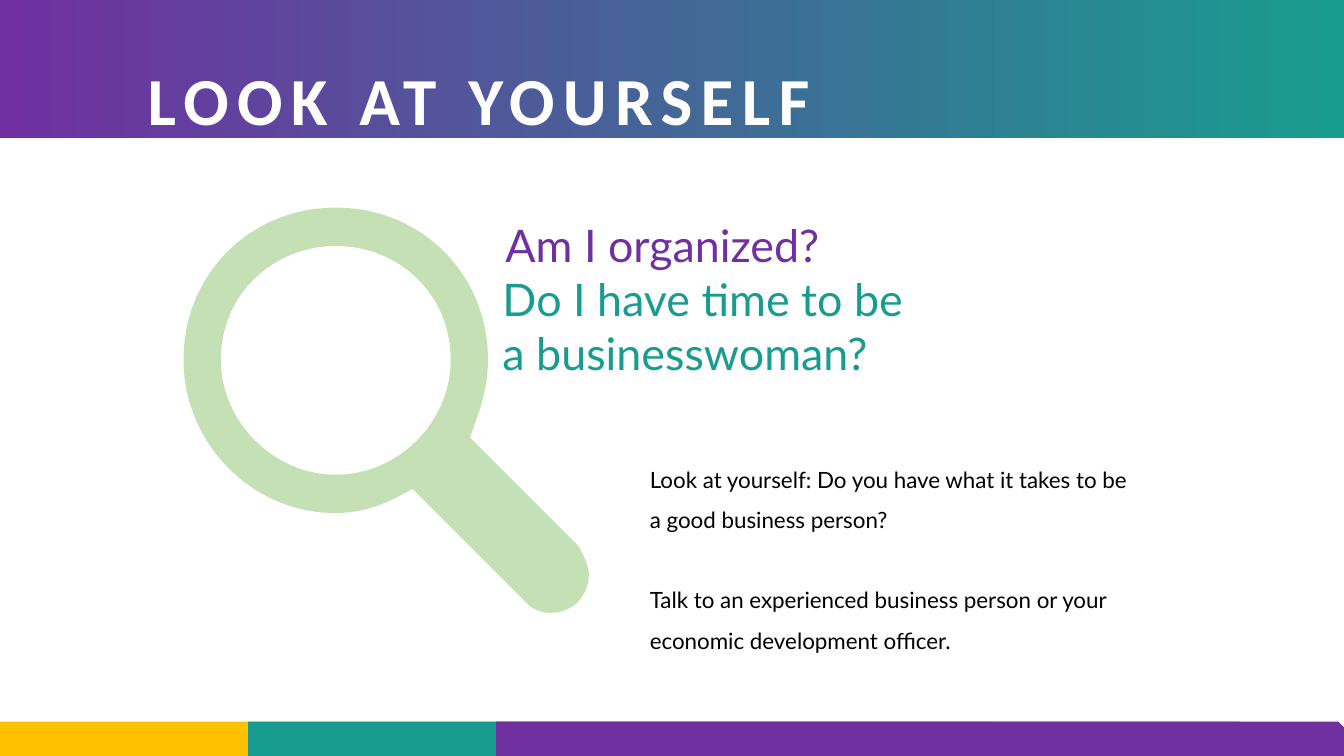
from dataclasses import dataclass
from pptx import Presentation
from pptx.dml.color import RGBColor as Color
from pptx.enum.shapes import MSO_SHAPE as Shape
from pptx.enum.text import MSO_ANCHOR as Anchor, MSO_AUTO_SIZE as AutoSize, PP_ALIGN as Align
from pptx.oxml.ns import qn
from pptx.util import Inches, Pt


@dataclass(frozen=True)
class Theme:
    purple = Color.from_string("7030A0")
    teal = Color.from_string("189C8F")
    amber = Color.from_string("FFC000")
    leaf = Color.from_string("C5E0B4")
    white = Color.from_string("FFFFFF")
    black = Color.from_string("000000")
    title_font = "Calibri"
    text_font = "Lato"
    title_size = Pt(48)
    question_size = Pt(32)
    body_size = Pt(16)
    advice_gap = Pt(28.5)


theme = Theme()
deck = Presentation()
deck.slide_width, deck.slide_height = Inches(13.33), Inches(7.5)
cell = deck.slide_height / 75
columns = deck.slide_width / cell


def grid(*cells):
    return [round(count * cell) for count in cells]


def write(box, lines, font, size, color):
    frame = box.text_frame
    frame.text = "\n".join(lines)
    frame.word_wrap = True
    frame.auto_size = AutoSize.NONE
    frame.vertical_anchor = Anchor.TOP
    for para in frame.paragraphs:
        para.alignment = Align.LEFT
        para.font.name, para.font.size = font, size
        para.font.color.rgb = color
    return frame.paragraphs


page = deck.slides.add_slide(deck.slide_layouts[1])
title, body = page.placeholders

band = page.shapes.add_shape(Shape.RECTANGLE, *grid(0, 0, columns, 13.7))
band.shadow.inherit = False
band.line.fill.background()
band.fill.gradient()
band.fill.gradient_angle = 0
for stop, color in zip(band.fill.gradient_stops, (theme.purple, theme.teal)):
    stop.color.rgb = color
title._element.addprevious(band._element)

title.left, title.top, title.width, title.height = grid(13.65, 5.3, 107.4, 7)
heading = write(title, ["LOOK AT YOURSELF"], theme.title_font, theme.title_size, theme.white)[0]
heading.font.bold = True
heading.runs[0].font._element.set("spc", "600")

footer = page.shapes.add_group_shape()
bar_step, bar_width = 24.6, 98.9
for index, color in enumerate((theme.amber, theme.teal, theme.purple)):
    left = index * bar_step
    width = min(bar_width, columns - left)
    bar = footer.shapes.add_shape(Shape.SNIP_1_RECTANGLE, *grid(left, 71.6, width, 3.4))
    bar.shadow.inherit = False
    bar.fill.solid()
    bar.fill.fore_color.rgb = color
    bar.line.fill.background()

body.left, body.top, body.width, body.height = grid(63.45, 44.4, 50.2, 20.7)
advice = write(body, [
    "Look at yourself: Do you have what it takes to be a good business person?",
    "Talk to an experienced business person or your economic development officer.",
], theme.text_font, theme.body_size, theme.black)
for index, para in enumerate(advice):
    para.line_spacing = 1.5
    para.space_before = index * theme.advice_gap
    settings = para._p.get_or_add_pPr()
    settings.set("marL", "0")
    settings.set("indent", "0")
    settings.append(settings.makeelement(qn("a:buNone"), {}))

handle_and_rim = [
    (57.4, 54.2),
    (57.9, 55.2), (58.4, 56.1), (58.4, 57),
    (58.4, 59), (56.9, 60.8), (54.6, 60.8),
    (53.7, 60.8), (52.7, 60.4), (52.3, 59.9),
    (40.9, 48.5), (40.9, 48.5), (40.9, 48.5),
    (38.5, 49.9), (36.2, 50.9), (33.3, 50.9),
    (24.8, 50.9), (18.2, 43.8), (18.2, 35.7),
    (18.2, 27.2), (24.8, 20.6), (33.3, 20.6),
    (41.8, 20.6), (48.4, 27.2), (48.4, 35.7),
    (48.4, 38.6), (47.5, 41), (46.6, 43.4),
    (57.4, 54.2), (57.4, 54.2), (57.4, 54.2),
]
lens = [
    (33.3, 24.4),
    (27.2, 24.4), (21.9, 29.1), (21.9, 35.7),
    (21.9, 41.9), (27.2, 47.1), (33.3, 47.1),
    (39.5, 47.1), (44.7, 41.9), (44.7, 35.7),
    (44.7, 29.1), (39.5, 24.4), (33.3, 24.4),
]
outline = page.shapes.build_freeform(*grid(*handle_and_rim[0]), scale=1.0)
outline.add_line_segments([grid(*point) for point in handle_and_rim[1:]], close=True)
outline.move_to(*grid(*lens[0]))
outline.add_line_segments([grid(*point) for point in lens[1:]], close=True)
magnifier = outline.convert_to_shape()
magnifier.shadow.inherit = False
magnifier.fill.solid()
magnifier.fill.fore_color.rgb = theme.leaf
magnifier.line.fill.background()

segments = list(magnifier._element.iter(qn("a:lnTo")))
for first, second, third in zip(segments[::3], segments[1::3], segments[2::3]):
    curve = first.makeelement(qn("a:cubicBezTo"), {})
    first.addprevious(curve)
    for segment in (first, second, third):
        curve.append(segment[0])
        segment.getparent().remove(segment)

for question, color, place in (
    ("Am I organized?", theme.purple, (49.15, 21.1, 33.6, 6.4)),
    ("Do I have time to be a businesswoman?", theme.teal, (48.85, 26.45, 43.1, 11.8)),
):
    box = page.shapes.add_textbox(*grid(*place))
    write(box, [question], theme.text_font, theme.question_size, color)

deck.save("out.pptx")
